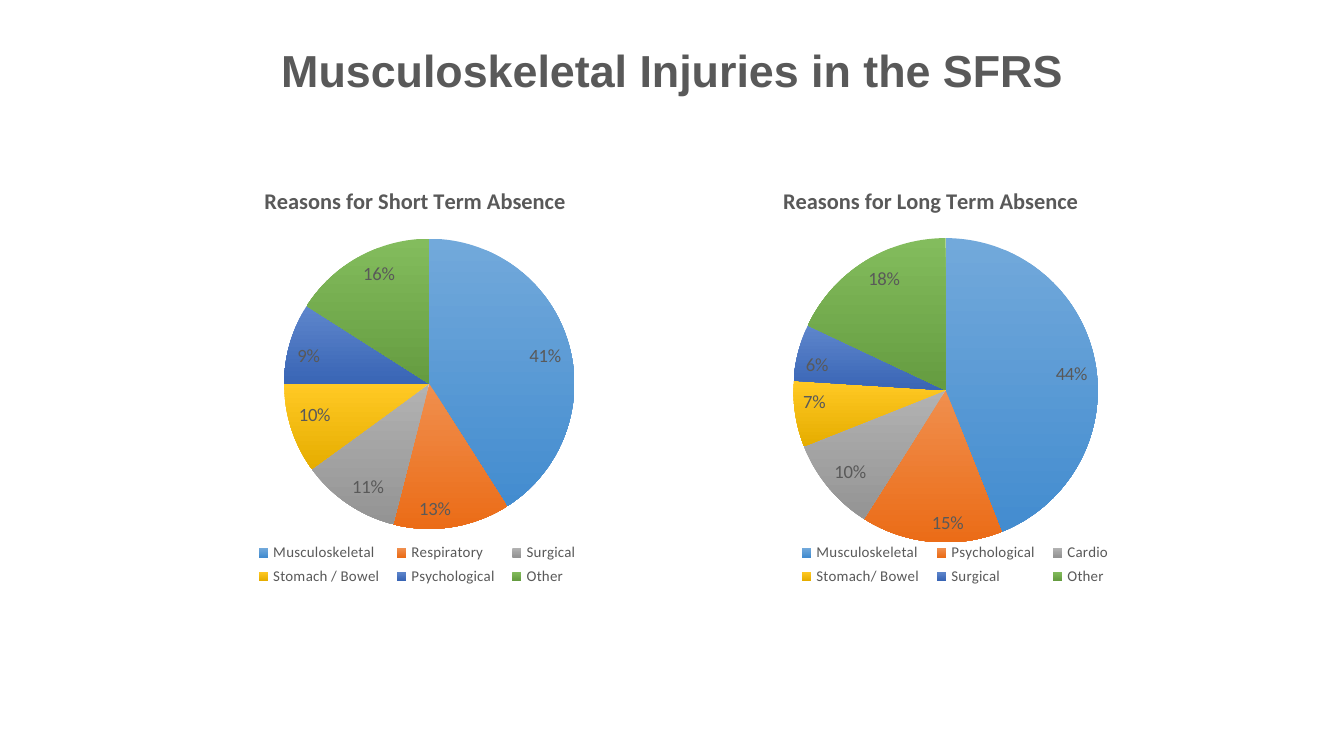
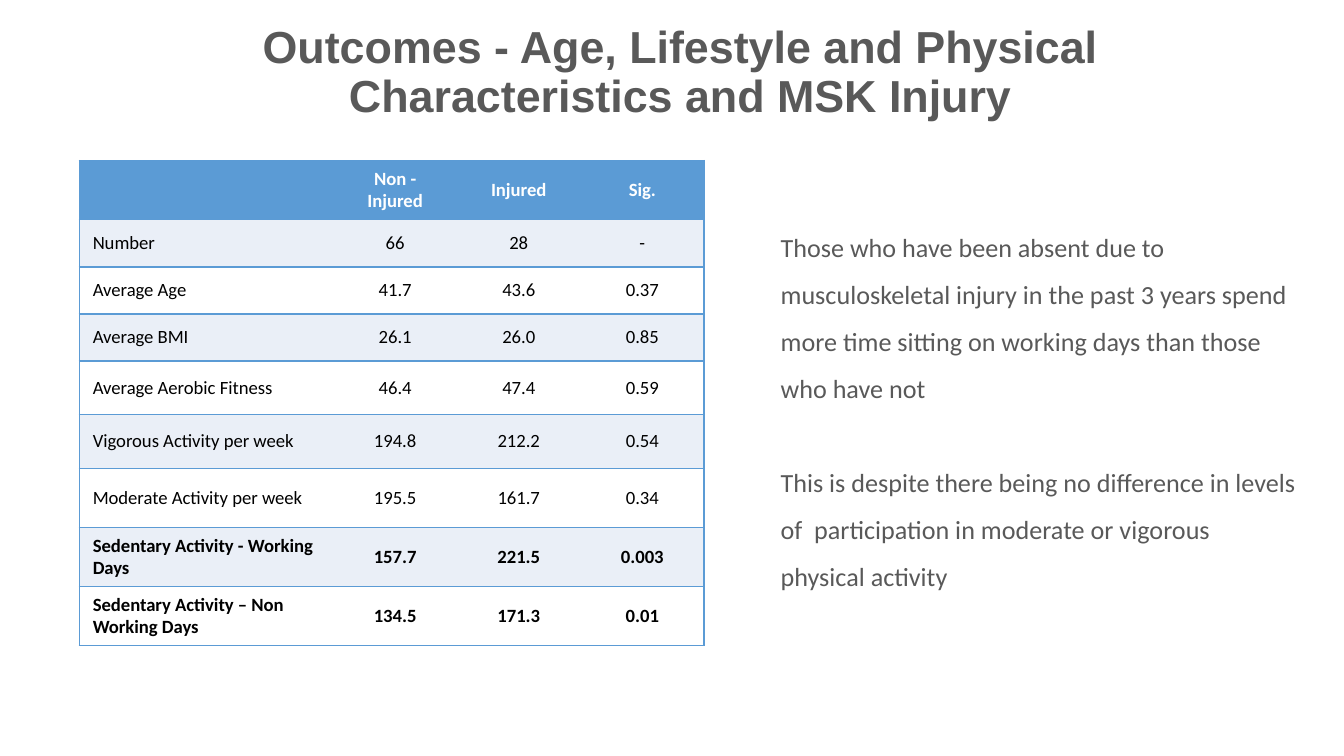
import pptx
import pptx.chart.data
import pptx.dml.color
import pptx.enum.chart
import pptx.enum.text
import pptx.oxml
import pptx.oxml.ns
import pptx.util

RGB = pptx.dml.color.RGBColor
GREY = RGB(0x59, 0x59, 0x59)
BLUE = RGB(0x5B, 0x9B, 0xD5)
PALE = RGB(0xEA, 0xEF, 0xF7)
WHITE = RGB(0xFF, 0xFF, 0xFF)
BLACK = RGB(0, 0, 0)
WEDGES = [BLUE, RGB(0xED, 0x7D, 0x31), RGB(0xA5, 0xA5, 0xA5),
          RGB(0xFF, 0xC0, 0x00), RGB(0x44, 0x72, 0xC4), RGB(0x70, 0xAD, 0x47)]
ALIGN = pptx.enum.text.PP_ALIGN
ANCHOR = pptx.enum.text.MSO_ANCHOR
HEAD = "Arial"
BODY = "Calibri"
UNIT = pptx.util.Inches(0.1)

PIES = [
    ("Reasons for Short Term Absence",
     ["Musculoskeletal", "Respiratory", "Surgical", "Stomach / Bowel",
      "Psychological", "Other"],
     [41, 13, 11, 10, 9, 16],
     (0.18, 0.04), (0.23, 0.17, 0.61, 0.67), (0.15, 0.86, 0.72, 0.12)),
    ("Reasons for Long Term Absence",
     ["Musculoskeletal", "Psychological", "Cardio", "Stomach/ Bowel",
      "Surgical", "Other"],
     [44, 15, 10, 7, 6, 18],
     (0.18, 0.04), (0.21, 0.17, 0.64, 0.7), (0.2, 0.86, 0.7, 0.12)),
]
ROWS = [
    ("", "Non - Injured", "Injured", "Sig."),
    ("Number", "66", "28", "-"),
    ("Average Age", "41.7", "43.6", "0.37"),
    ("Average BMI", "26.1", "26.0", "0.85"),
    ("Average Aerobic Fitness", "46.4", "47.4", "0.59"),
    ("Vigorous Activity per week", "194.8", "212.2", "0.54"),
    ("Moderate Activity per week", "195.5", "161.7", "0.34"),
    ("Sedentary Activity - Working Days", "157.7", "221.5", "0.003"),
    ("Sedentary Activity – Non Working Days", "134.5", "171.3", "0.01"),
]
TALL = [4.4, 3.5, 3.5, 3.5, 4, 4, 4.4, 4.4, 4.4]
WIDE = [18.9, 9.2, 9.2, 9.2]
NOTES = [
    "Those who have been absent due to musculoskeletal injury in the past "
    "3 years spend more time sitting on working days than those who have not",
    "This is despite there being no difference in levels of  participation "
    "in moderate or vigorous physical activity",
]


def grid(*sizes):
    """Turn grid units into slide lengths."""
    return [int(size * UNIT) for size in sizes]


def style(font, size, color=GREY, bold=False, name=BODY):
    """Set the face, size, colour and weight of a font."""
    font.name, font.size, font.bold = name, pptx.util.Pt(size), bold
    font.color.rgb = color


def write(para, text, *look):
    """Add one styled run to a paragraph."""
    run = para.add_run()
    run.text = text
    style(run.font, *look)


def title(slide, box, text):
    """Write the centred heading of a slide."""
    frame = slide.shapes.add_textbox(*grid(*box)).text_frame
    frame.word_wrap = True
    frame.vertical_anchor = ANCHOR.MIDDLE
    para = frame.paragraphs[0]
    para.alignment, para.line_spacing = ALIGN.CENTER, 0.9
    write(para, text, 24, GREY, True, HEAD)


def layout(part, spot, index):
    """Fix a chart part at shares of the chart's size."""
    for old in part.xpath("c:layout"):
        part.remove(old)
    inner = '<c:layoutTarget val="inner"/>' if index == 0 else ""
    modes = '<c:xMode val="edge"/><c:yMode val="edge"/>'
    sides = "".join(f'<c:{key} val="{val}"/>' for key, val in zip("xywh", spot))
    part.insert(index, pptx.oxml.parse_xml(
        f'<c:layout {pptx.oxml.ns.nsdecls("c")}><c:manualLayout>'
        f'{inner}{modes}{sides}</c:manualLayout></c:layout>'))


def shade(fill, color):
    """Fill from a lighter tone down to a darker one."""
    fill.gradient()
    fill.gradient_angle = 270
    for stop, tone in zip(fill.gradient_stops, (0.14, -0.1)):
        stop.color.rgb = color
        stop.color.brightness = tone


def pie(slide, box, name, cats, vals, head, plot, key):
    """Draw a pie chart with its title, labels and legend."""
    data = pptx.chart.data.CategoryChartData()
    data.categories = cats
    data.add_series("Series 1", vals)
    kind = pptx.enum.chart.XL_CHART_TYPE.PIE
    chart = slide.shapes.add_chart(kind, *grid(*box), data).chart
    style(chart.font, 10)
    chart.has_title = True
    write(chart.chart_title.text_frame.paragraphs[0], name, 12, GREY, True)
    chart.has_legend = True
    chart.legend.position = pptx.enum.chart.XL_LEGEND_POSITION.BOTTOM
    chart.legend.include_in_layout = False
    style(chart.legend.font, 8)
    disc = chart.plots[0]
    disc.vary_by_categories = True
    disc.has_data_labels = True
    labels = disc.data_labels
    labels.show_percentage, labels.show_value = True, False
    labels.number_format, labels.number_format_is_linked = "0%", False
    labels.position = pptx.enum.chart.XL_LABEL_POSITION.INSIDE_END
    style(labels.font, 10)
    for i, color in enumerate(WEDGES):
        shade(disc.series[0].points[i].format.fill, color)
    root = chart.element
    for tag, spot, index in (("title", head, 1), ("plotArea", plot, 0),
                             ("legend", key, 1)):
        layout(root.xpath(f"c:chart/c:{tag}")[0], spot, index)


def pair(slide, box):
    """Set the pies side by side, flush with the ends of the box."""
    left, top, width, height = box
    side = 35.4
    for i, parts in enumerate(PIES):
        pie(slide, (left + i * (width - side), top, side, height), *parts)


def edge(cell, sides):
    """Rule the given sides of a cell, and clear the others."""
    props = cell._tc.get_or_add_tcPr()
    for i, side in enumerate("LRTB"):
        ink = (f'<a:solidFill><a:srgbClr val="{BLUE}"/></a:solidFill>'
               if side in sides else "<a:noFill/>")
        props.insert(i, pptx.oxml.parse_xml(
            f'<a:ln{side} {pptx.oxml.ns.nsdecls("a")} w="12700">{ink}</a:ln{side}>'))


def table(slide, box):
    """Build the table of outcomes with bold head and last rows."""
    shape = slide.shapes.add_table(len(ROWS), len(WIDE), *grid(*box))
    sheet = shape.table
    for col, width in zip(sheet.columns, grid(*WIDE)):
        col.width = width
    for row, height in zip(sheet.rows, grid(*TALL)):
        row.height = height
    for r, texts in enumerate(ROWS):
        for c, text in enumerate(texts):
            cell = sheet.cell(r, c)
            cell.vertical_anchor = ANCHOR.MIDDLE
            cell.fill.solid()
            cell.fill.fore_color.rgb = BLUE if r == 0 else PALE if r % 2 else WHITE
            edge(cell, "TB" + {0: "L", len(WIDE) - 1: "R"}.get(c, ""))
            para = cell.text_frame.paragraphs[0]
            para.alignment = ALIGN.CENTER if c else ALIGN.LEFT
            if text:
                bold = r == 0 or r >= len(ROWS) - 2
                write(para, text, 10, BLACK if r else WHITE, bold)
            else:
                para.font.size = pptx.util.Pt(10)


def notes(slide, box):
    """Write the findings beside the table."""
    frame = slide.shapes.add_textbox(*grid(*box)).text_frame
    frame.word_wrap = True
    for i, text in enumerate(NOTES):
        para = frame.add_paragraph() if i else frame.paragraphs[0]
        para.line_spacing = 1.5
        if i:
            para.space_before = pptx.util.Pt(25)
        write(para, text, 14)


def main():
    """Build both slides and save them."""
    deck = pptx.Presentation()
    deck.slide_width, deck.slide_height = grid(100, 56.25)
    blank = deck.slide_layouts[6]

    slide = deck.slides.add_slide(blank)
    title(slide, (6.9, 0, 86.2, 10.9), "Musculoskeletal Injuries in the SFRS")
    pair(slide, (13, 12.2, 74, 32.4))

    slide = deck.slides.add_slide(blank)
    title(slide, (7.5, 0, 86.2, 10.9),
          "Outcomes - Age, Lifestyle and Physical Characteristics and MSK Injury")
    table(slide, (5.9, 11.95, sum(WIDE), sum(TALL)))
    notes(slide, (57.1, 15.55, 40.5, 31.3))
    deck.save("out.pptx")


if __name__ == "__main__":
    main()
